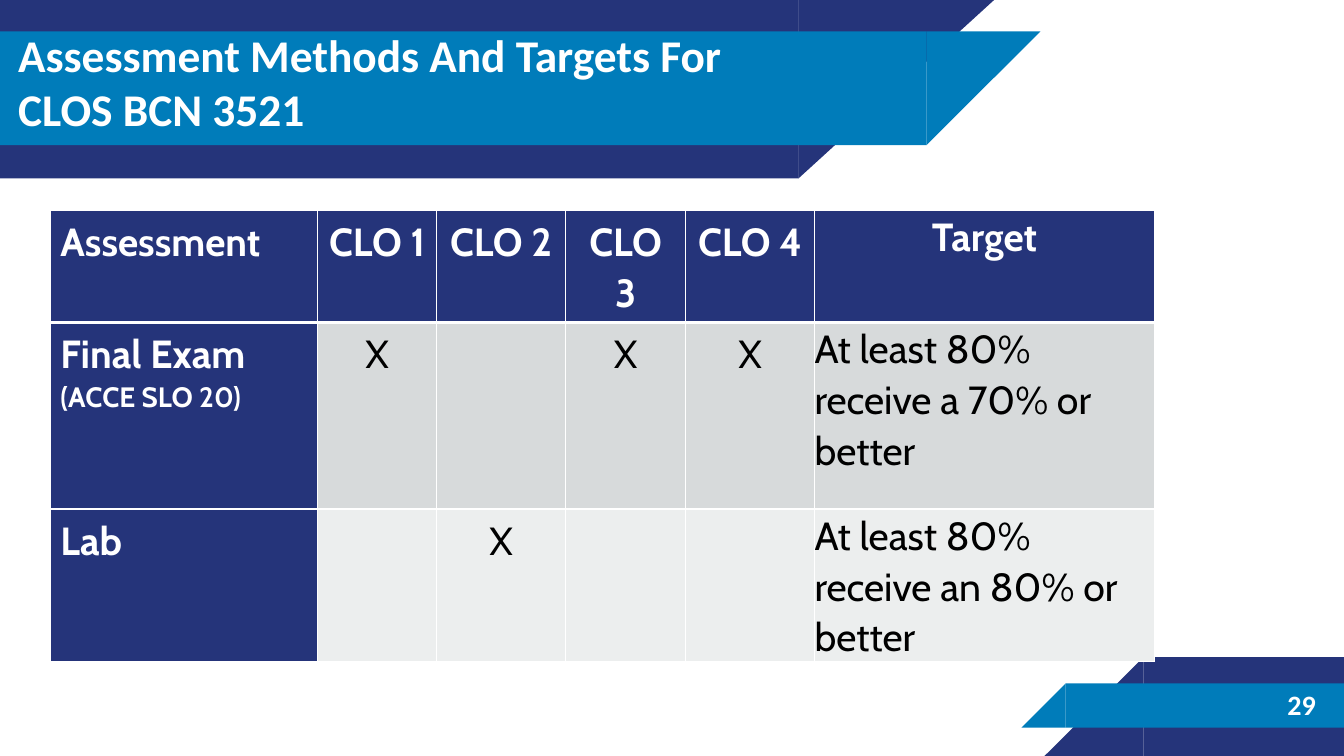
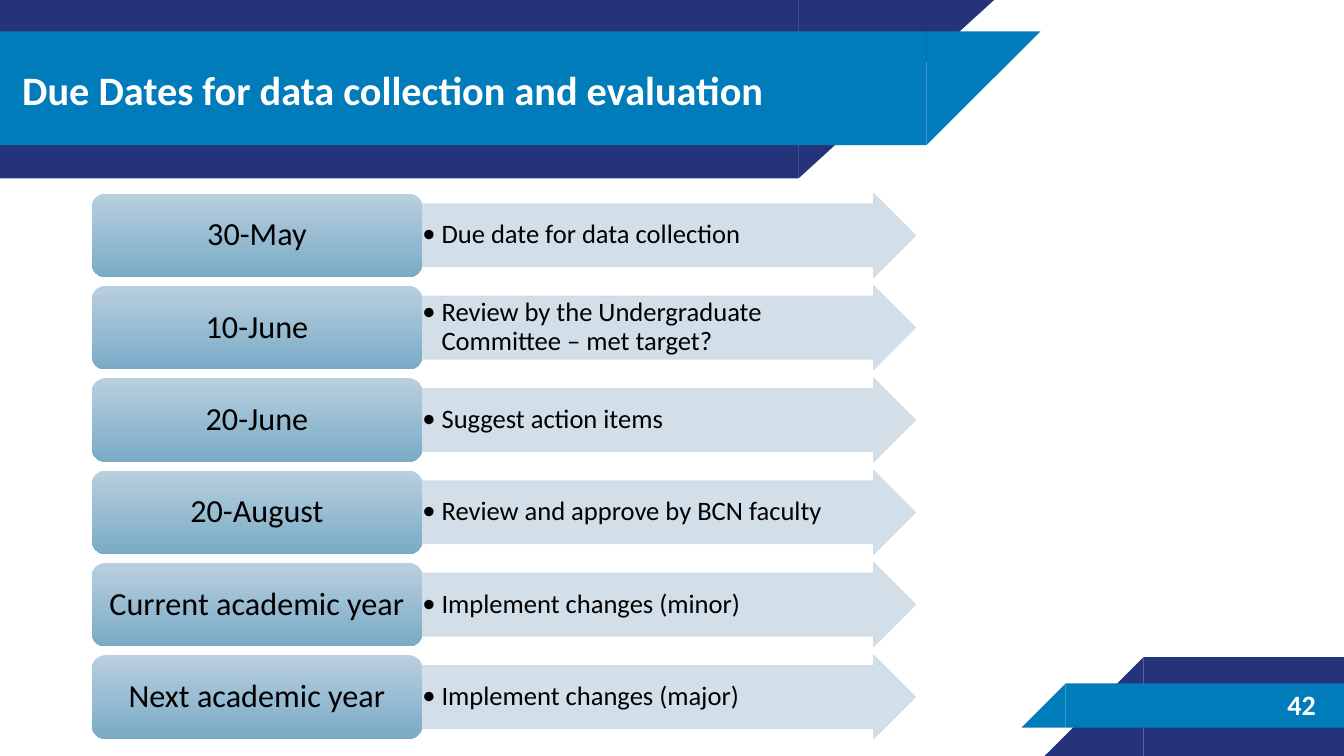
import lxml.etree
import pptx
import pptx.dml.color
import pptx.enum.shapes
import pptx.enum.text
import pptx.oxml.ns
import pptx.util

Inches = pptx.util.Inches
Pt = pptx.util.Pt
qn = pptx.oxml.ns.qn
ALIGN = pptx.enum.text.PP_ALIGN
SHAPE = pptx.enum.shapes.MSO_SHAPE

COLORS = {
    "navy": "25347A", "blue": "007CBA", "white": "FFFFFF", "black": "000000",
    "band_dark": "D7DADB", "band_light": "ECEEEE", "arrow": "CEDCE7",
    "gradient_top": "B9CFDE", "gradient_bottom": "79ABC7",
}
BANDS = [
    ("navy", SHAPE.RECTANGLE, 0, 0, 7.92, 1.77, 180),
    ("navy", SHAPE.RIGHT_TRIANGLE, 7.92, 0, 1.94, 1.77, 180),
    ("blue", SHAPE.RECTANGLE, 0, 0.31, 9.19, 1.13, 180),
    ("blue", SHAPE.RIGHT_TRIANGLE, 9.19, 0.31, 1.13, 1.13, 180),
    ("navy", SHAPE.RECTANGLE, 11.34, 6.52, 2, 0.98, 0),
    ("navy", SHAPE.RIGHT_TRIANGLE, 10.36, 6.52, 0.98, 0.98, 0),
    ("blue", SHAPE.RECTANGLE, 10.57, 6.78, 2.77, 0.44, 0),
    ("blue", SHAPE.RIGHT_TRIANGLE, 10.13, 6.78, 0.44, 0.44, 0),
]
COLUMN_WIDTHS = [2.65, 1.18, 1.28, 1.19, 1.28, 3.37]
ROW_HEIGHTS = [1.1, 1.85, 1.5]
ASSESSMENTS = [
    ["Assessment", "CLO 1", "CLO 2", "CLO 3", "CLO 4", "Target"],
    ["Final Exam ", "X", "", "X", "X", "At least 80% receive a 70% or better"],
    ["Lab", "", "X", "", "", "At least 80% receive an 80% or better"],
]
DUE_DATES = [
    ("30-May", "Due date for data collection"),
    ("10-June", "Review by the Undergraduate Committee – met target?"),
    ("20-June", "Suggest action items"),
    ("20-August", "Review and approve by BCN faculty"),
    ("Current academic year", "Implement changes (minor)"),
    ("Next academic year", "Implement changes (major)"),
]


def color(name):
    """Return the named colour."""
    return pptx.dml.color.RGBColor.from_string(COLORS[name])


def format_paragraph(paragraph, size, color_name, font="Calibri", bold=False,
                     align=ALIGN.LEFT, spacing=None):
    """Style a paragraph and all its runs."""
    paragraph.alignment = align
    if spacing:
        paragraph.line_spacing = spacing
    for run in paragraph.runs:
        run.font.size = Pt(size)
        run.font.name = font
        run.font.bold = bold
        run.font.color.rgb = color(color_name)


def set_frame(frame, left, top, right, bottom):
    """Set insets in inches, wrapping and middle anchoring."""
    frame.auto_size = pptx.enum.text.MSO_AUTO_SIZE.NONE
    frame.word_wrap = True
    frame.vertical_anchor = pptx.enum.text.MSO_ANCHOR.MIDDLE
    frame.margin_left, frame.margin_top = Inches(left), Inches(top)
    frame.margin_right, frame.margin_bottom = Inches(right), Inches(bottom)


def add_box(slide, kind, left, top, width, height):
    """Add a preset shape without shadow."""
    shape = slide.shapes.add_shape(kind, Inches(left), Inches(top), Inches(width), Inches(height))
    shape.shadow.inherit = False
    return shape


def add_layout_bands(layout, slide):
    """Draw the slanted bands and place them behind the layout's placeholders."""
    for index, (color_name, kind, left, top, width, height, rotation) in enumerate(BANDS):
        band = add_box(slide, kind, left, top, width, height)
        band.rotation = rotation
        band.element.spPr.xfrm.set("flipH", "1")
        band.fill.solid()
        band.fill.fore_color.rgb = color(color_name)
        band.line.fill.background()
        band.name = f"Band {index + 1}"
        band.element.nvSpPr.cNvPr.set("id", str(100 + index))
        layout.shapes.element.insert(2 + index, band.element)


def set_title(slide, text, left, top, size):
    """Fill, move and style the title placeholder."""
    title = slide.shapes.title
    title.left, title.top = Inches(left), Inches(top)
    title.width, title.height = Inches(7.67), Inches(1.1)
    title.text_frame.text = text
    set_frame(title.text_frame, 0.1, 0.1, 0.1, 0.1)
    format_paragraph(title.text_frame.paragraphs[0], size, "white", bold=True)


def add_page_number(slide, number):
    """Write the page number on the lower band."""
    box = slide.shapes.add_textbox(Inches(12.67), Inches(6.76), Inches(0.61), Inches(0.46))
    box.text_frame.text = str(number)
    set_frame(box.text_frame, 0.1, 0.1, 0.1, 0.1)
    format_paragraph(box.text_frame.paragraphs[0], 20, "white", bold=True)


def set_borders(cell, row):
    """Rule a cell in white, thicker below the header row."""
    properties = cell._tc.get_or_add_tcPr()
    widths = {"lnL": 1, "lnR": 1, "lnT": 3 if row == 1 else 1, "lnB": 3 if row == 0 else 1}
    for tag, width in widths.items():
        line = lxml.etree.SubElement(properties, qn(f"a:{tag}"), w=str(Pt(width)))
        fill = lxml.etree.SubElement(line, qn("a:solidFill"))
        lxml.etree.SubElement(fill, qn("a:srgbClr"), val=COLORS["white"])


def format_cell(cell, row, column):
    """Style a cell by its place in the table."""
    is_heading = row == 0 or column == 0
    is_target = column == len(COLUMN_WIDTHS) - 1
    set_borders(cell, row)
    cell.fill.solid()
    body_fill = "band_dark" if row == 1 else "band_light"
    cell.fill.fore_color.rgb = color("navy" if is_heading else body_fill)
    if is_target:
        cell.margin_left = cell.margin_top = cell.margin_right = cell.margin_bottom = 0
    is_left = column == 0 or (is_target and row > 0)
    paragraph = cell.text_frame.paragraphs[0]
    paragraph.space_after = Pt(12)
    format_paragraph(paragraph, 28, "white" if is_heading else "black", "Cabin",
                     is_heading, ALIGN.LEFT if is_left else ALIGN.CENTER, 1.07)


def add_assessment_table(slide):
    """Add the table of assessments, outcomes and targets."""
    table = slide.shapes.add_table(
        len(ROW_HEIGHTS), len(COLUMN_WIDTHS), Inches(0.5), Inches(2.09),
        Inches(sum(COLUMN_WIDTHS)), Inches(sum(ROW_HEIGHTS))).table
    for column, width in zip(table.columns, COLUMN_WIDTHS):
        column.width = Inches(width)
    for row, height in zip(table.rows, ROW_HEIGHTS):
        row.height = Inches(height)
    for row, texts in enumerate(ASSESSMENTS):
        for column, text in enumerate(texts):
            cell = table.cell(row, column)
            cell.text_frame.text = text
            format_cell(cell, row, column)
    exam = table.cell(1, 0).text_frame.paragraphs[0]
    outcome = exam.add_run()
    outcome.text = "(ACCE SLO 20)"
    format_paragraph(exam, 28, "white", "Cabin", True, spacing=1.07)
    outcome.font.size = Pt(20)


def add_action_arrow(slide, top, text):
    """Add a translucent arrow with a bulleted action."""
    arrow = add_box(slide, SHAPE.RIGHT_ARROW, 4.18, top, 4.9, 0.83)
    arrow.adjustments[0] = 0.75
    arrow.adjustments[1] = 0.5
    arrow.fill.solid()
    arrow.fill.fore_color.rgb = color("arrow")
    arrow.line.color.rgb = color("arrow")
    arrow.line.width = Pt(0.75)
    for tint in arrow.element.spPr.iter(qn("a:srgbClr")):
        lxml.etree.SubElement(tint, qn("a:alpha"), val="90000")
    arrow.text_frame.text = text
    set_frame(arrow.text_frame, 0.01, 0.01, 0.22, 0.01)
    paragraph = arrow.text_frame.paragraphs[0]
    format_paragraph(paragraph, 19, "black", spacing=0.9)
    properties = paragraph._p.get_or_add_pPr()
    properties.set("marL", str(Inches(0.19)))
    properties.set("indent", str(Inches(-0.19)))
    lxml.etree.SubElement(properties, qn("a:buFont"), typeface="Calibri")
    lxml.etree.SubElement(properties, qn("a:buChar"), char="•")


def add_date_box(slide, top, text):
    """Add a rounded gradient box with a date."""
    box = add_box(slide, SHAPE.ROUNDED_RECTANGLE, 0.91, top, 3.28, 0.83)
    box.fill.gradient()
    box.fill.gradient_angle = 270
    for stop, name in zip(box.fill.gradient_stops, ("gradient_top", "gradient_bottom")):
        stop.color.rgb = color(name)
    box.line.fill.background()
    box.text_frame.text = text
    set_frame(box.text_frame, 0.1, 0.05, 0.1, 0.05)
    format_paragraph(box.text_frame.paragraphs[0], 23, "black",
                     align=ALIGN.CENTER, spacing=0.9)


def add_due_dates(slide):
    """Stack the due-date rows at an even pitch."""
    first_top, last_top = 1.92, 6.5
    pitch = (last_top - first_top) / (len(DUE_DATES) - 1)
    for index, (date, action) in enumerate(DUE_DATES):
        top = first_top + index * pitch
        add_action_arrow(slide, top, action)
        add_date_box(slide, top, date)


def main():
    """Build and save the presentation."""
    presentation = pptx.Presentation()
    presentation.slide_width = Inches(13.33)
    presentation.slide_height = Inches(7.5)
    layout = presentation.slide_layouts[5]

    assessment_slide = presentation.slides.add_slide(layout)
    add_layout_bands(layout, assessment_slide)
    set_title(assessment_slide, "Assessment Methods And Targets For CLOS BCN 3521",
              0.08, 0.26, 32.4)
    add_page_number(assessment_slide, 29)
    add_assessment_table(assessment_slide)

    dates_slide = presentation.slides.add_slide(layout)
    set_title(dates_slide, "Due Dates for data collection and evaluation", 0.12, 0.34, 28.8)
    add_page_number(dates_slide, 42)
    add_due_dates(dates_slide)

    presentation.save("out.pptx")


if __name__ == "__main__":
    main()
